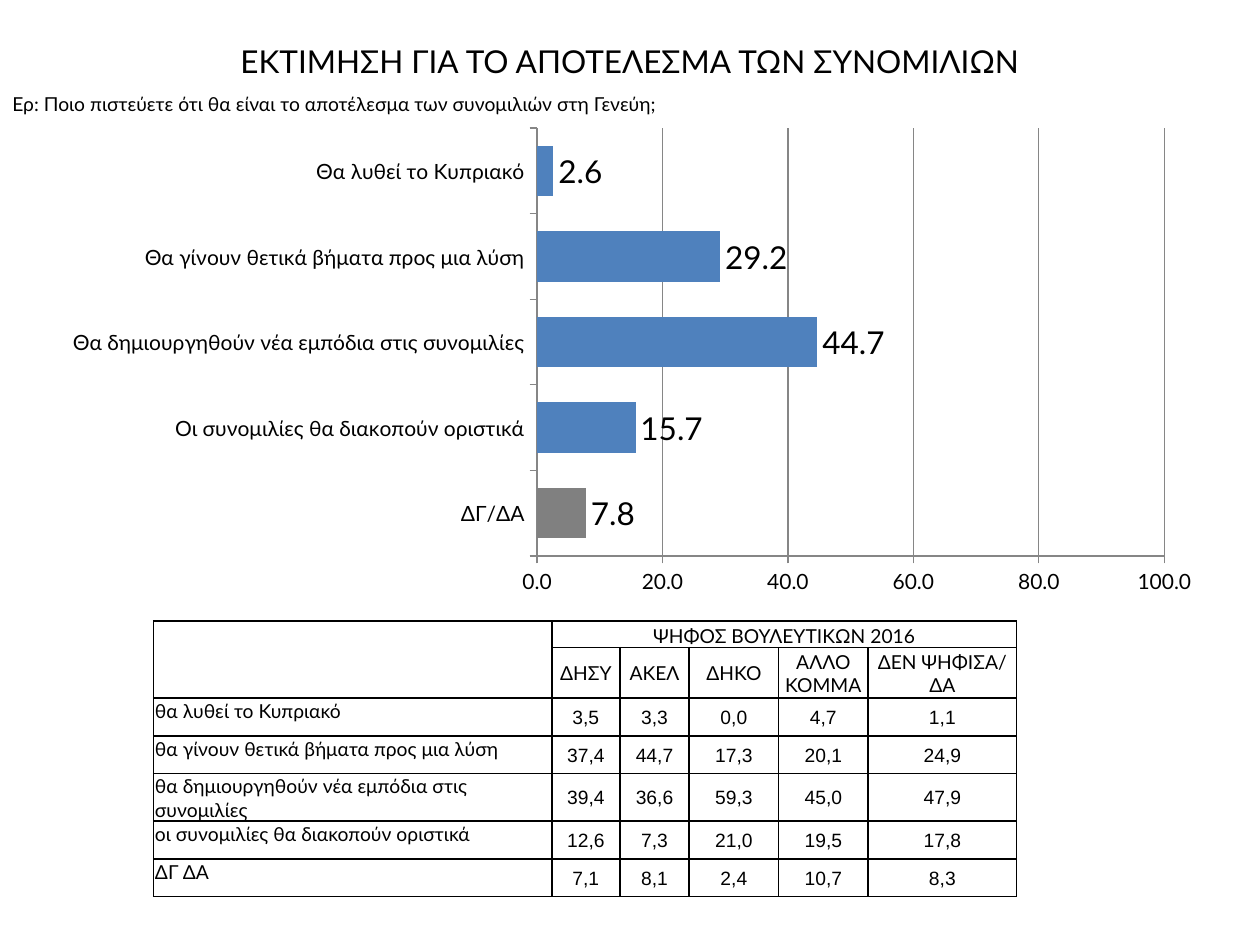
"""Builds a poll slide with a bar chart of expectations and a table by party vote."""
import pptx
import pptx.chart.data
import pptx.dml.color
import pptx.enum.chart
import pptx.enum.text
import pptx.oxml
import pptx.oxml.ns
import pptx.util
from pptx.util import Inches, Pt

WIDTH, HEIGHT = 10, 7.5
TITLE = "ΕΚΤΙΜΗΣΗ ΓΙΑ ΤΟ ΑΠΟΤΕΛΕΣΜΑ ΤΩΝ ΣΥΝΟΜΙΛΙΩΝ"
QUESTION = "Ερ: Ποιο πιστεύετε ότι θα είναι το αποτέλεσμα των συνομιλιών στη Γενεύη;"
ANSWERS = [
    ("ΔΓ/ΔΑ", 7.8),
    ("Οι συνομιλίες θα διακοπούν οριστικά", 15.7),
    ("Θα δημιουργηθούν νέα εμπόδια στις συνομιλίες", 44.7),
    ("Θα γίνουν θετικά βήματα προς μια λύση", 29.2),
    ("Θα λυθεί το Κυπριακό", 2.6),
]
VOTE_ROWS = [
    ("", "ΨΗΦΟΣ ΒΟΥΛΕΥΤΙΚΩΝ 2016", "", "", "", ""),
    ("", "ΔΗΣΥ", "ΑΚΕΛ", "ΔΗΚΟ", "ΑΛΛΟ ΚΟΜΜΑ", "ΔΕΝ ΨΗΦΙΣΑ/ ΔΑ"),
    ("θα λυθεί το Κυπριακό", "3,5", "3,3", "0,0", "4,7", "1,1"),
    ("θα γίνουν θετικά βήματα προς μια λύση", "37,4", "44,7", "17,3", "20,1", "24,9"),
    ("θα δημιουργηθούν νέα εμπόδια στις συνομιλίες", "39,4", "36,6", "59,3", "45,0", "47,9"),
    ("οι συνομιλίες θα διακοπούν οριστικά", "12,6", "7,3", "21,0", "19,5", "17,8"),
    ("ΔΓ ΔΑ", "7,1", "8,1", "2,4", "10,7", "8,3"),
]
COLUMN_WIDTHS = [3.16, 0.54, 0.55, 0.71, 0.71, 1.18]
ROW_HEIGHTS = [0.21, 0.4, 0.3, 0.3, 0.37, 0.3, 0.3]
HEADER_ROWS = 2
PLOT_SHARES = {"x": 0.42, "y": 0.02, "w": 0.54, "h": 0.88}
ALIGN = pptx.enum.text.PP_ALIGN
ANCHOR = pptx.enum.text.MSO_ANCHOR


def color(value):
    return pptx.dml.color.RGBColor.from_string(value)


def format_font(font, size, name="Lato"):
    font.size, font.name, font.bold = Pt(size), name, False
    font.color.rgb = color("000000")


def write(frame, text, size=11, name="Lato", align=ALIGN.LEFT):
    frame.word_wrap = True
    paragraph = frame.paragraphs[0]
    paragraph.alignment = align
    run = paragraph.add_run()
    run.text = text
    format_font(run.font, size, name)


def add_borders(cell):
    properties = cell._tc.get_or_add_tcPr()
    for side in "LRTB":
        properties.append(pptx.oxml.parse_xml(
            f'<a:ln{side} {pptx.oxml.ns.nsdecls("a")} w="12700"><a:solidFill>'
            f'<a:srgbClr val="000000"/></a:solidFill></a:ln{side}>'))


def add_headings(slide):
    title = slide.shapes.title
    title.left, title.top = 0, Inches(0.28)
    title.width, title.height = Inches(WIDTH), Inches(0.32)
    title.text_frame.vertical_anchor = ANCHOR.TOP
    title.text_frame.auto_size = pptx.enum.text.MSO_AUTO_SIZE.NONE
    write(title.text_frame, TITLE, size=18, align=ALIGN.CENTER)
    question = slide.shapes.add_textbox(0, Inches(0.68), Inches(WIDTH), Inches(0.39))
    write(question.text_frame, QUESTION)


def add_answer_chart(slide):
    data = pptx.chart.data.CategoryChartData(number_format="###0.0")
    data.categories = [answer for answer, _ in ANSWERS]
    data.add_series("Series 1", [share for _, share in ANSWERS])
    chart = slide.shapes.add_chart(
        pptx.enum.chart.XL_CHART_TYPE.BAR_CLUSTERED,
        Inches(0.39), Inches(0.94), Inches(9.22), Inches(3.86), data).chart
    chart.has_legend = chart.has_title = False
    format_font(chart.font, 18, "TeX Gyre Pagella")

    plot = chart.plots[0]
    plot.gap_width, plot.vary_by_categories = 70, False
    bars = plot.series[0]
    bars.format.fill.solid()
    bars.format.fill.fore_color.rgb = color("4F81BD")
    undecided = bars.points[0].format.fill
    undecided.solid()
    undecided.fore_color.rgb = color("808080")
    labels = bars.data_labels
    labels.show_value = True
    labels.number_format, labels.number_format_is_linked = "###0.0", False
    labels.position = pptx.enum.chart.XL_LABEL_POSITION.OUTSIDE_END
    format_font(labels.font, 18)

    shares = chart.value_axis
    shares.minimum_scale, shares.maximum_scale, shares.major_unit = 0, 100, 20
    shares.tick_labels.number_format = "###0.0"
    shares.tick_labels.number_format_is_linked = False
    shares.has_major_gridlines = True
    for axis in (chart.category_axis, shares):
        axis.major_tick_mark = pptx.enum.chart.XL_TICK_MARK.OUTSIDE
        axis.format.line.color.rgb = color("868686")
        format_font(axis.tick_labels.font, 12)
    shares.major_gridlines.format.line.color.rgb = color("868686")

    plot_area = chart._chartSpace.chart.plotArea
    for old in plot_area.findall(pptx.oxml.ns.qn("c:layout")):
        plot_area.remove(old)
    modes = "".join(f'<c:{side}Mode val="edge"/>' for side in "xy")
    sizes = "".join(f'<c:{side} val="{share}"/>' for side, share in PLOT_SHARES.items())
    plot_area.insert(0, pptx.oxml.parse_xml(
        f'<c:layout {pptx.oxml.ns.nsdecls("c")}><c:manualLayout>'
        f'<c:layoutTarget val="inner"/>{modes}{sizes}</c:manualLayout></c:layout>'))


def add_vote_table(slide):
    table = slide.shapes.add_table(
        len(ROW_HEIGHTS), len(COLUMN_WIDTHS), Inches(1.22), Inches(4.93),
        Inches(sum(COLUMN_WIDTHS)), Inches(sum(ROW_HEIGHTS))).table
    table.first_row = table.horz_banding = False
    for column, width in zip(table.columns, COLUMN_WIDTHS):
        column.width = Inches(width)
    for row, height in zip(table.rows, ROW_HEIGHTS):
        row.height = Inches(height)
    for r, texts in enumerate(VOTE_ROWS):
        for c, text in enumerate(texts):
            cell = table.cell(r, c)
            cell.margin_left = cell.margin_right = cell.margin_top = Inches(0.01)
            cell.margin_bottom = 0
            cell.vertical_anchor = ANCHOR.BOTTOM if r == 0 else ANCHOR.MIDDLE if c else ANCHOR.TOP
            add_borders(cell)
            cell.fill.background()
            if text:
                write(cell.text_frame, text,
                      name="Arial" if c and r >= HEADER_ROWS else "Lato",
                      align=ALIGN.CENTER if c else ALIGN.LEFT)
            else:
                cell.text_frame.paragraphs[0].font.size = Pt(11)
    table.cell(0, 0).merge(table.cell(HEADER_ROWS - 1, 0))
    table.cell(0, 1).merge(table.cell(0, len(COLUMN_WIDTHS) - 1))


def main():
    deck = pptx.Presentation()
    deck.slide_width, deck.slide_height = Inches(WIDTH), Inches(HEIGHT)
    slide = deck.slides.add_slide(deck.slide_layouts[5])
    add_headings(slide)
    add_answer_chart(slide)
    add_vote_table(slide)
    deck.save("out.pptx")


if __name__ == "__main__":
    main()
